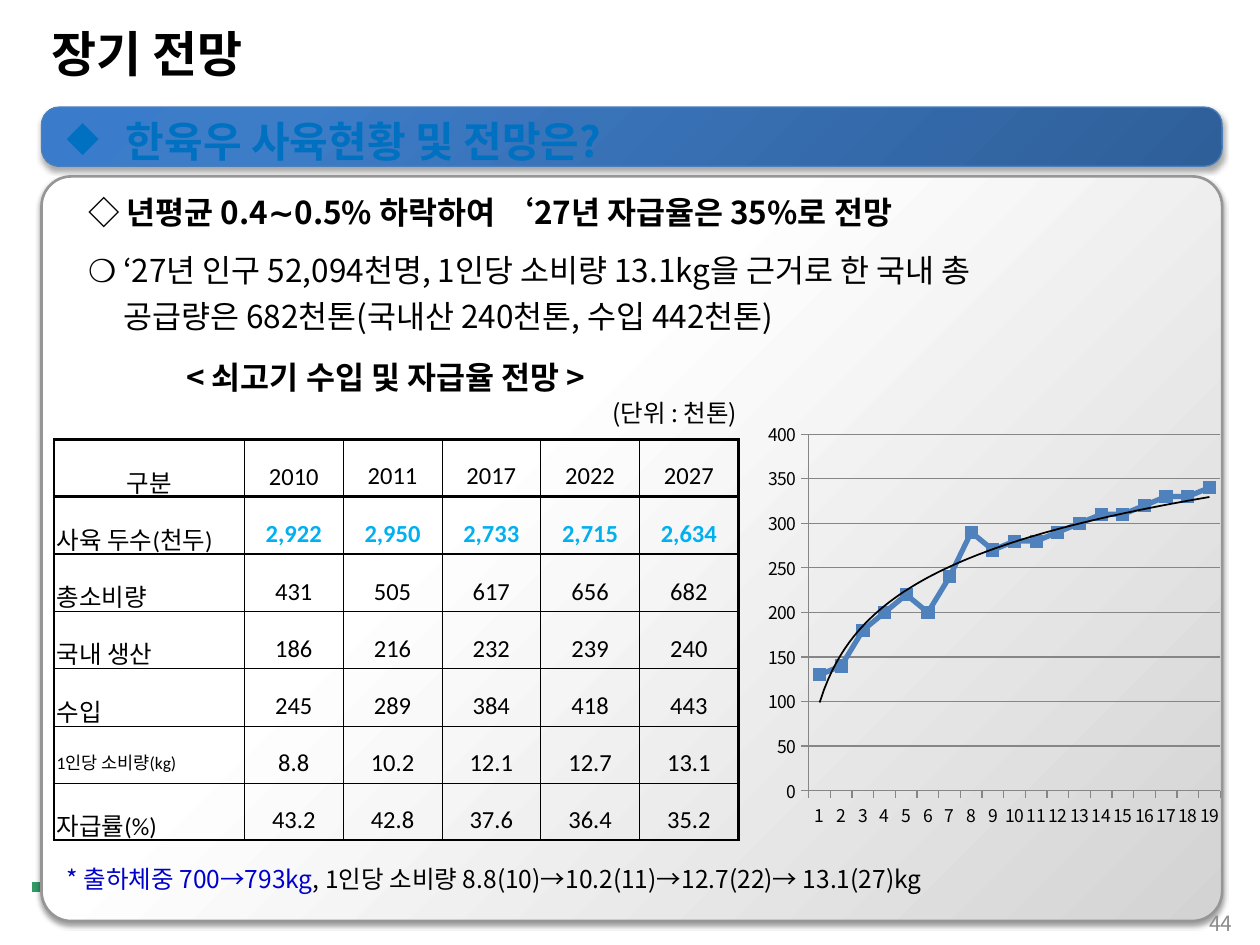
"""Build the long-term outlook slide on beef cattle: panels, text, forecast table and trend chart."""
import pptx
import pptx.chart.data
import pptx.dml.color
import pptx.enum.chart
import pptx.enum.shapes
import pptx.enum.text
import pptx.oxml
import pptx.oxml.ns
import pptx.util

KOREAN = "Noto Sans CJK KR"
SPACE = 'xmlns:a="http://schemas.openxmlformats.org/drawingml/2006/main" xmlns:c="http://schemas.openxmlformats.org/drawingml/2006/chart"'
Pt = pptx.util.Pt
Align = pptx.enum.text.PP_ALIGN
Anchor = pptx.enum.text.MSO_ANCHOR


def tint(hex_code):
    return pptx.dml.color.RGBColor.from_string(hex_code)


def add_span(para, words, size, hex_code="000000", bold=False, latin=KOREAN):
    span = para.add_run()
    span.text = words
    span.font.size = Pt(size)
    span.font.bold = bold
    span.font.name = latin
    span.font.color.rgb = tint(hex_code)
    east = pptx.oxml.parse_xml(f'<a:ea {SPACE} typeface="{KOREAN}"/>')
    span.font._element.find(pptx.oxml.ns.qn("a:latin")).addnext(east)


deck = pptx.Presentation()
deck.slide_width = pptx.util.Inches(10)
deck.slide_height = pptx.util.Inches(7.5)
column = deck.slide_width // 100
row = deck.slide_height // 75
page = deck.slides.add_slide(deck.slide_layouts[5])

Shape = pptx.enum.shapes.MSO_SHAPE
panels = [
    (Shape.RECTANGLE, (2.5, 70, 94.2, 0.8), None, [(0, "339966"), (100, "E9F0EC")], 0, None, None),
    (Shape.ROUNDED_RECTANGLE, (3.3, 8.5, 93.7, 4.7), 0.3,
     [(0, "2F5F99"), (80, "3D7CC7"), (100, "3A7CCB")], 225, ("4B7EBC", 0.75), (35, 1.8)),
    (Shape.ROUNDED_RECTANGLE, (3.3, 14, 93.7, 59.1), 0.04,
     [(38, "FFFFFF"), (100, "D3D3D3")], 45, ("969696", 1.5), (38, 1.6)),
]
for kind, (left, top, width, height), corner, stops, angle, outline, shade in panels:
    panel = page.shapes.add_shape(kind, int(left * column), int(top * row), int(width * column), int(height * row))
    panel.shadow.inherit = False
    if corner:
        panel.adjustments[0] = corner
    if outline:
        panel.line.color.rgb = tint(outline[0])
        panel.line.width = Pt(outline[1])
    else:
        panel.line.fill.background()
    marks = "".join(f'<a:gs pos="{stop * 1000}"><a:srgbClr val="{code}"/></a:gs>' for stop, code in stops)
    properties = panel._element.spPr
    properties.find(pptx.oxml.ns.qn("a:prstGeom")).addnext(pptx.oxml.parse_xml(
        f'<a:gradFill {SPACE} rotWithShape="1"><a:gsLst>{marks}</a:gsLst>'
        f'<a:lin ang="{angle * 60000}" scaled="0"/></a:gradFill>'))
    if shade:
        properties.find(pptx.oxml.ns.qn("a:effectLst")).append(pptx.oxml.parse_xml(
            f'<a:outerShdw {SPACE} blurRad="{Pt(3.1)}" dist="{Pt(shade[1])}" dir="5400000" rotWithShape="0">'
            f'<a:srgbClr val="000000"><a:alpha val="{shade[0] * 1000}"/></a:srgbClr></a:outerShdw>'))

title = page.shapes.title
title.left, title.top, title.width, title.height = int(3.1 * column), 0, int(74.4 * column), int(8.4 * row)
title.text_frame.vertical_anchor = Anchor.MIDDLE
title.text_frame.paragraphs[0].alignment = Align.LEFT
add_span(title.text_frame.paragraphs[0], "장기 전망", 28, bold=True)

texts = [
    ((75.5, 71.3, 23.3, 4), Anchor.MIDDLE, Align.RIGHT, 1, [(0, [("44", 12, "8C8C8C")])]),
    ((4.3, 8.7, 91.4, 4.4), Anchor.TOP, Align.LEFT, 1,
     [(4.7, [("한육우 사육현황 및 전망은?", 24, "0070C0", True)])]),
    ((6, 14.7, 79.8, 4.2), Anchor.TOP, Align.LEFT, 1.05,
     [(0, [("◇ 년평균 0.4∼0.5% 하락하여 ‘27년 자급율은 35%로 전망", 18, "000000", True)])]),
    ((6, 19.3, 83.5, 7.6), Anchor.TOP, Align.LEFT, 1.05,
     [(0, [("❍ ‘27년 인구 52,094천명, 1인당 소비량 13.1kg을 근거로 한 국내 총", 18)]),
      (2.8, [("공급량은 682천톤(국내산 240천톤, 수입 442천톤)", 18)])]),
    ((45.3, 31.2, 16.5, 3.1), Anchor.MIDDLE, Align.CENTER, 1, [(0, [("(단위 : 천톤)", 14)])]),
    ((13.8, 27.8, 38.6, 4), Anchor.TOP, Align.JUSTIFY, 1.05,
     [(0, [("< 쇠고기 수입 및 자급율 전망 >", 18, "000000", True)])]),
    ((4.3, 68.2, 78, 3.1), Anchor.MIDDLE, Align.LEFT, 1,
     [(0, [("* 출하체중 700→793kg", 14, "0000CC"),
           (", 1인당 소비량 8.8(10)→10.2(11)→12.7(22)→ 13.1(27)kg", 14)])]),
]
for (left, top, width, height), anchor, align, spacing, lines in texts:
    box = page.shapes.add_textbox(int(left * column), int(top * row), int(width * column), int(height * row))
    frame = box.text_frame
    frame.word_wrap = True
    frame.vertical_anchor = anchor
    for number, (indent, spans) in enumerate(lines):
        para = frame.add_paragraph() if number else frame.paragraphs[0]
        para.alignment = align
        para.line_spacing = spacing
        if number:
            para.space_before = Pt(3.6)
        settings = para._p.get_or_add_pPr()
        settings.set("marL", str(int(indent * column)))
        if spans[0][1] == 24:
            settings.set("indent", str(-int(indent * column)))
            for bullet in ('<a:buClr {}><a:srgbClr val="0070C0"/></a:buClr>', '<a:buChar {} char="◆"/>'):
                settings.append(pptx.oxml.parse_xml(bullet.format(SPACE)))
        for span in spans:
            add_span(para, *span)

records = [
    ("구분", "2010", "2011", "2017", "2022", "2027"),
    ("사육 두수(천두)", "2,922", "2,950", "2,733", "2,715", "2,634"),
    ("총소비량", "431", "505", "617", "656", "682"),
    ("국내 생산", "186", "216", "232", "239", "240"),
    ("수입", "245", "289", "384", "418", "443"),
    ("1인당 소비량(kg)", "8.8", "10.2", "12.1", "12.7", "13.1"),
    ("자급률(%)", "43.2", "42.8", "37.6", "36.4", "35.2"),
]
across = [1.7, 1.98, 0.85, 0.85, 0.28, 0.28, 0.28, 1.7]
down = [1.7] + [0.28] * 5 + [1.7]
table = page.shapes.add_table(7, 6, int(4.3 * column), int(34.9 * row), int(54.3 * column), int(31.8 * row)).table
table.first_row = table.horz_banding = False
for index, table_column in enumerate(table.columns):
    table_column.width = int((7.84 if index else 15.1) * column)
for y, record in enumerate(records):
    for x, words in enumerate(record):
        cell = table.cell(y, x)
        cell.vertical_anchor = Anchor.MIDDLE
        cell.margin_left = cell.margin_right = cell.margin_top = cell.margin_bottom = int(0.2 * column)
        for side, weight in zip("LRTB", (down[x], down[x + 1], across[y], across[y + 1])):
            cell._tc.get_or_add_tcPr().append(pptx.oxml.parse_xml(
                f'<a:ln{side} {SPACE} w="{Pt(weight)}"><a:solidFill><a:srgbClr val="000000"/></a:solidFill></a:ln{side}>'))
        cell.fill.background()
        para = cell.text_frame.paragraphs[0]
        para.alignment = Align.CENTER if x or not y else Align.LEFT
        para.line_spacing = 1.5 if y == 0 and x > 1 else 1.6
        herd = y == 1 and x > 0
        add_span(para, words, 10 if (y, x) == (5, 0) else 14, "00B0F0" if herd else "000000", herd,
                 "Calibri" if x or y else KOREAN)

figures = pptx.chart.data.CategoryChartData()
figures.categories = [str(year) for year in range(1, 20)]
figures.add_series("Series 1", [130, 140, 180, 200, 220, 200, 240, 290, 270, 280,
                                280, 290, 300, 310, 310, 320, 330, 330, 340])
chart = page.shapes.add_chart(
    pptx.enum.chart.XL_CHART_TYPE.LINE_MARKERS, int(60.2 * column), int(32.8 * row),
    int(37.4 * column), int(33.6 * row), figures).chart
chart.has_legend = chart.has_title = False
chart.font.size = Pt(10)
chart.font.name = KOREAN
chart.font.color.rgb = tint("000000")
chart.plots[0].vary_by_categories = False
series = chart.plots[0].series[0]
series.smooth = False
series.format.line.color.rgb = tint("4F81BD")
series.format.line.width = Pt(3)
series.marker.style = pptx.enum.chart.XL_MARKER_STYLE.SQUARE
series.marker.size = 7
series.marker.format.fill.solid()
series.marker.format.fill.fore_color.rgb = tint("4F81BD")
series.marker.format.line.color.rgb = tint("4F81BD")
series._element.find(pptx.oxml.ns.qn("c:cat")).addprevious(pptx.oxml.parse_xml(
    f'<c:trendline {SPACE}><c:spPr><a:ln w="{Pt(1)}"><a:solidFill><a:srgbClr val="000000"/></a:solidFill></a:ln></c:spPr>'
    '<c:trendlineType val="log"/><c:dispRSqr val="0"/><c:dispEq val="0"/></c:trendline>'))
chart.value_axis.minimum_scale = 0
chart.value_axis.maximum_scale = 400
chart.value_axis.major_unit = 50
chart.value_axis.has_major_gridlines = True
chart.value_axis.major_gridlines.format.line.color.rgb = tint("868686")
for axis in (chart.category_axis, chart.value_axis):
    axis.major_tick_mark = pptx.enum.chart.XL_TICK_MARK.OUTSIDE
    axis.format.line.color.rgb = tint("868686")

deck.save("out.pptx")
